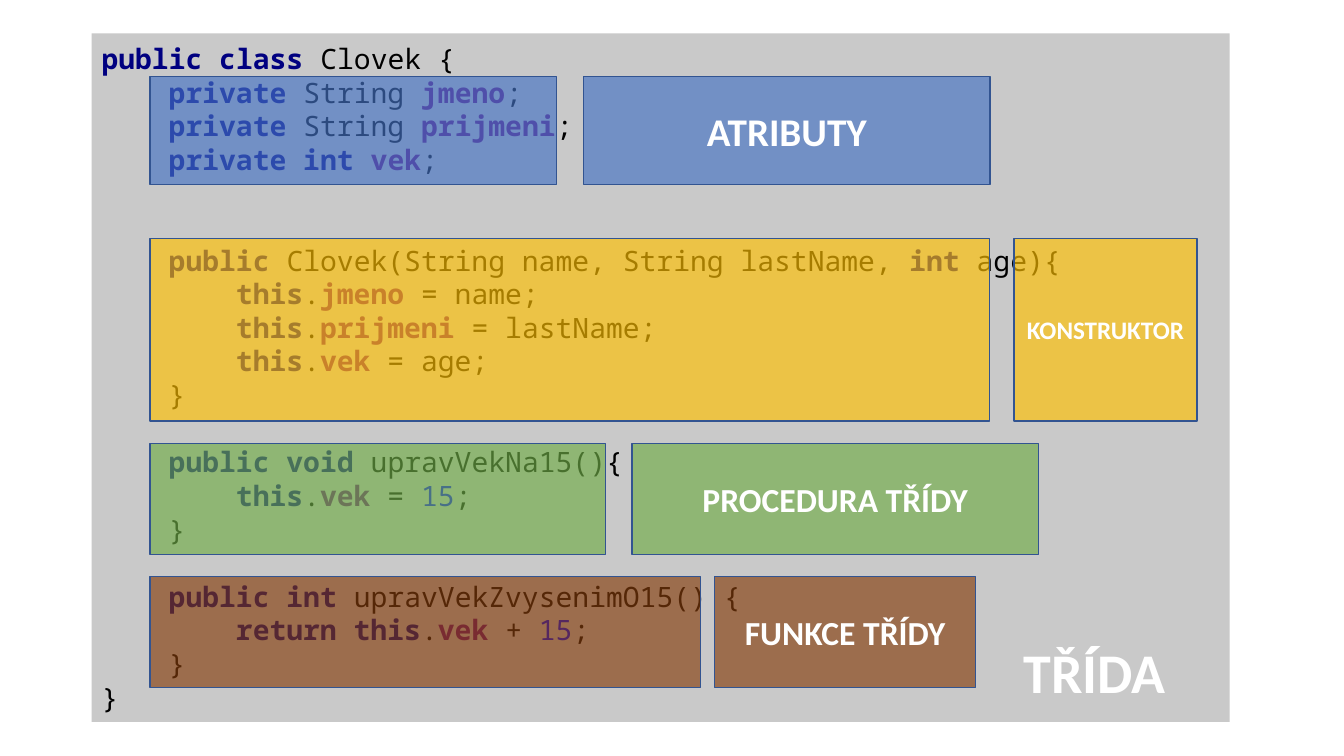
from lxml import etree
from pptx import Presentation
from pptx.dml.color import RGBColor
from pptx.enum.shapes import MSO_SHAPE
from pptx.enum.text import MSO_ANCHOR, PP_ALIGN
from pptx.oxml.ns import qn
from pptx.util import Cm, Pt

RECT = MSO_SHAPE.RECTANGLE
MIDDLE = MSO_ANCHOR.MIDDLE
LEFT, CENTER = PP_ALIGN.LEFT, PP_ALIGN.CENTER

COLORS = {
    "panel": "C9C9C9", "white": "FFFFFF", "outline": "325491",
    "attributes": "4472C4", "constructor": "FFC000",
    "procedure": "70AD47", "function": "843C0B",
    "plain": "000000", "keyword": "000080", "field": "660E7A", "number": "0000FF",
}
BOLD_STYLES = ("keyword", "field")
CODE_FONT, LABEL_FONT = "Noto Sans Mono", "Calibri"
CODE_SIZE, LINE_PITCH, INDENT = Pt(20), Pt(24), Pt(48)
OPACITY = 65

T, K, F, N = "plain", "keyword", "field", "number"
# blank lines before, indent level, (style, text) runs
CODE = [
    (0, 0, [(K, "public class "), (T, "Clovek {")]),
    (0, 1, [(K, "private "), (T, "String "), (F, "jmeno"), (T, ";")]),
    (0, 1, [(K, "private "), (T, "String "), (F, "prijmeni"), (T, ";")]),
    (0, 1, [(K, "private int "), (F, "vek"), (T, ";")]),
    (2, 1, [(K, "public "), (T, "Clovek(String name, String lastName, "),
            (K, "int "), (T, "age){")]),
    (0, 2, [(K, "this"), (T, "."), (F, "jmeno "), (T, "= name;")]),
    (0, 2, [(K, "this"), (T, "."), (F, "prijmeni "), (T, "= lastName;")]),
    (0, 2, [(K, "this"), (T, "."), (F, "vek "), (T, "= age;")]),
    (0, 1, [(T, "}")]),
    (1, 1, [(K, "public void "), (T, "upravVekNa15(){")]),
    (0, 2, [(K, "this"), (T, "."), (F, "vek "), (T, "= "), (N, "15"), (T, ";")]),
    (0, 1, [(T, "}")]),
    (1, 1, [(K, "public int "), (T, "upravVekZvysenimO15() {")]),
    (0, 2, [(K, "return this"), (T, "."), (F, "vek "), (T, "+ "), (N, "15"), (T, ";")]),
    (0, 1, [(T, "}")]),
    (0, 0, [(T, "}")]),
]

# colour, top, height, code width, label left, label width (cm), label, size (pt)
SECTIONS = [
    ("attributes", 1.93, 2.72, 10.24, 14.71, 10.24, "ATRIBUTY", 28),
    ("constructor", 6.01, 4.6, 21.16, 25.55, 4.62, "KONSTRUKTOR", 18),
    ("procedure", 11.18, 2.79, 11.48, 15.93, 10.24, "PROCEDURA TŘÍDY", 24),
    ("function", 14.53, 2.79, 13.87, 18.01, 6.58, "FUNKCE TŘÍDY", 24),
]
CODE_LEFT = 3.78


def rgb(name):
    return RGBColor.from_string(COLORS[name])


def add_rect(s, left, top, width, height, color):
    sp = s.shapes.add_shape(RECT, Cm(left), Cm(top), Cm(width), Cm(height))
    sp.shadow.inherit = False
    sp.fill.solid()
    sp.fill.fore_color.rgb = rgb(color)
    sp.line.fill.background()
    return sp


def add_overlay(s, left, top, width, height, color):
    """Add a translucent, outlined rectangle."""
    sp = add_rect(s, left, top, width, height, color)
    sp.line.color.rgb = rgb("outline")
    sp.line.width = Pt(1)
    clr = sp.fill._xPr.find(qn("a:solidFill"))[0]
    etree.SubElement(clr, qn("a:alpha")).set("val", str(OPACITY * 1000))
    return sp


def write_label(sp, text, size, align):
    p = sp.text_frame.paragraphs[0]
    p.text = text
    p.alignment = align
    p.font.name = LABEL_FONT
    p.font.size = Pt(size)
    p.font.bold = True
    p.font.color.rgb = rgb("white")


def write_code(tf):
    tf.word_wrap = True
    tf.vertical_anchor = MIDDLE
    for i, (blanks, level, runs) in enumerate(CODE):
        p = tf.add_paragraph() if i else tf.paragraphs[0]
        p.alignment = LEFT
        p.line_spacing = LINE_PITCH
        p.space_before = LINE_PITCH * blanks
        p._p.get_or_add_pPr().set("marL", str(INDENT * level))
        p.font.name = CODE_FONT
        p.font.size = CODE_SIZE
        for style, text in runs:
            r = p.add_run()
            r.text = text
            r.font.bold = style in BOLD_STYLES
            r.font.color.rgb = rgb(style)


def main():
    prs = Presentation()
    prs.slide_width, prs.slide_height = Cm(33.87), Cm(19.05)
    s = prs.slides.add_slide(prs.slide_layouts[6])

    panel = add_rect(s, 2.31, 0.84, 28.68, 17.35, "panel")
    write_code(panel.text_frame)

    title = s.shapes.add_textbox(Cm(25.55), Cm(15.93), Cm(7.82), Cm(1.96))
    title.text_frame.word_wrap = True
    write_label(title, "TŘÍDA", 40, LEFT)

    for color, top, height, code_w, label_left, label_w, label, size in SECTIONS:
        add_overlay(s, CODE_LEFT, top, code_w, height, color)
        sp = add_overlay(s, label_left, top, label_w, height, color)
        sp.text_frame.vertical_anchor = MIDDLE
        write_label(sp, label, size, CENTER)

    prs.save("out.pptx")


if __name__ == "__main__":
    main()
